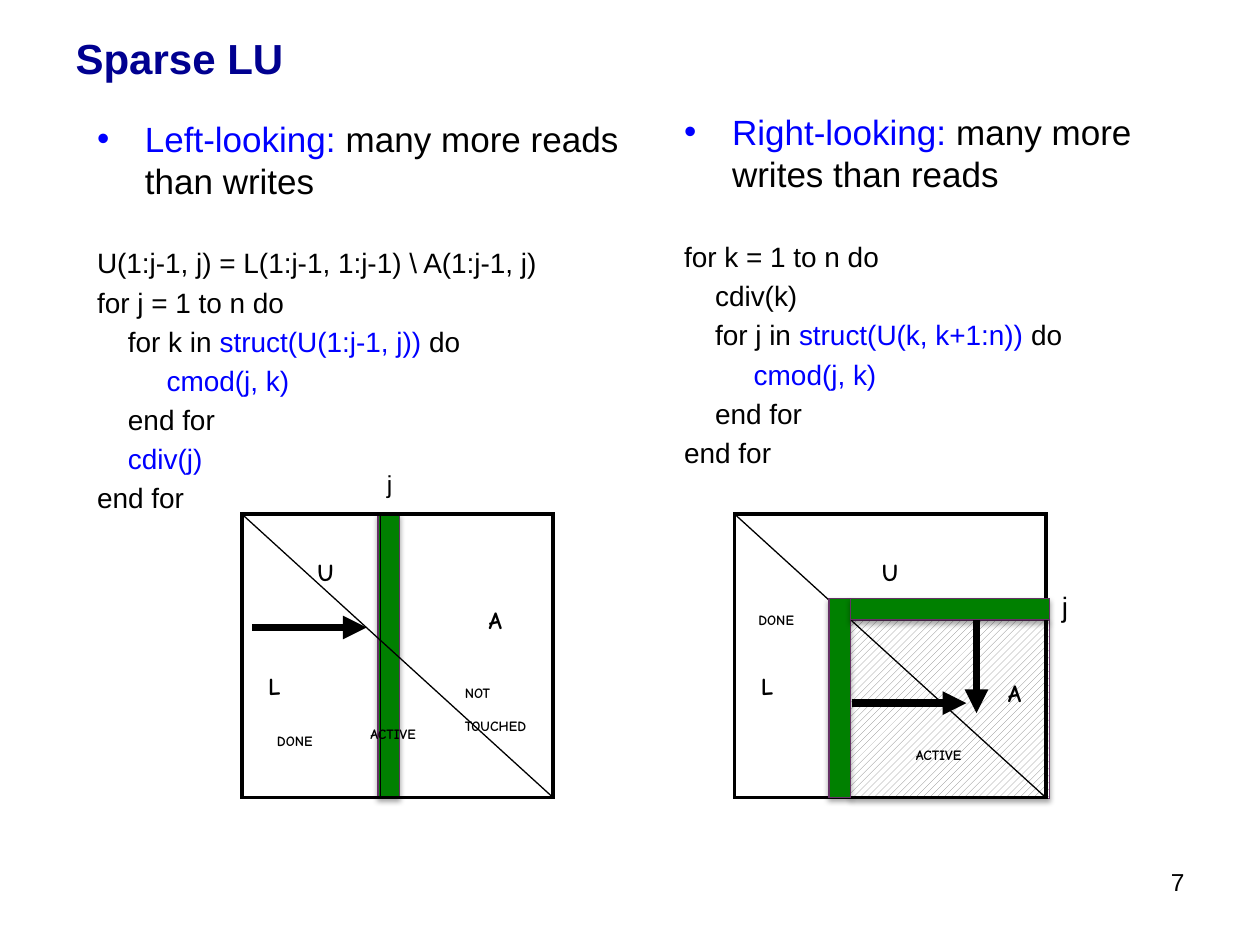
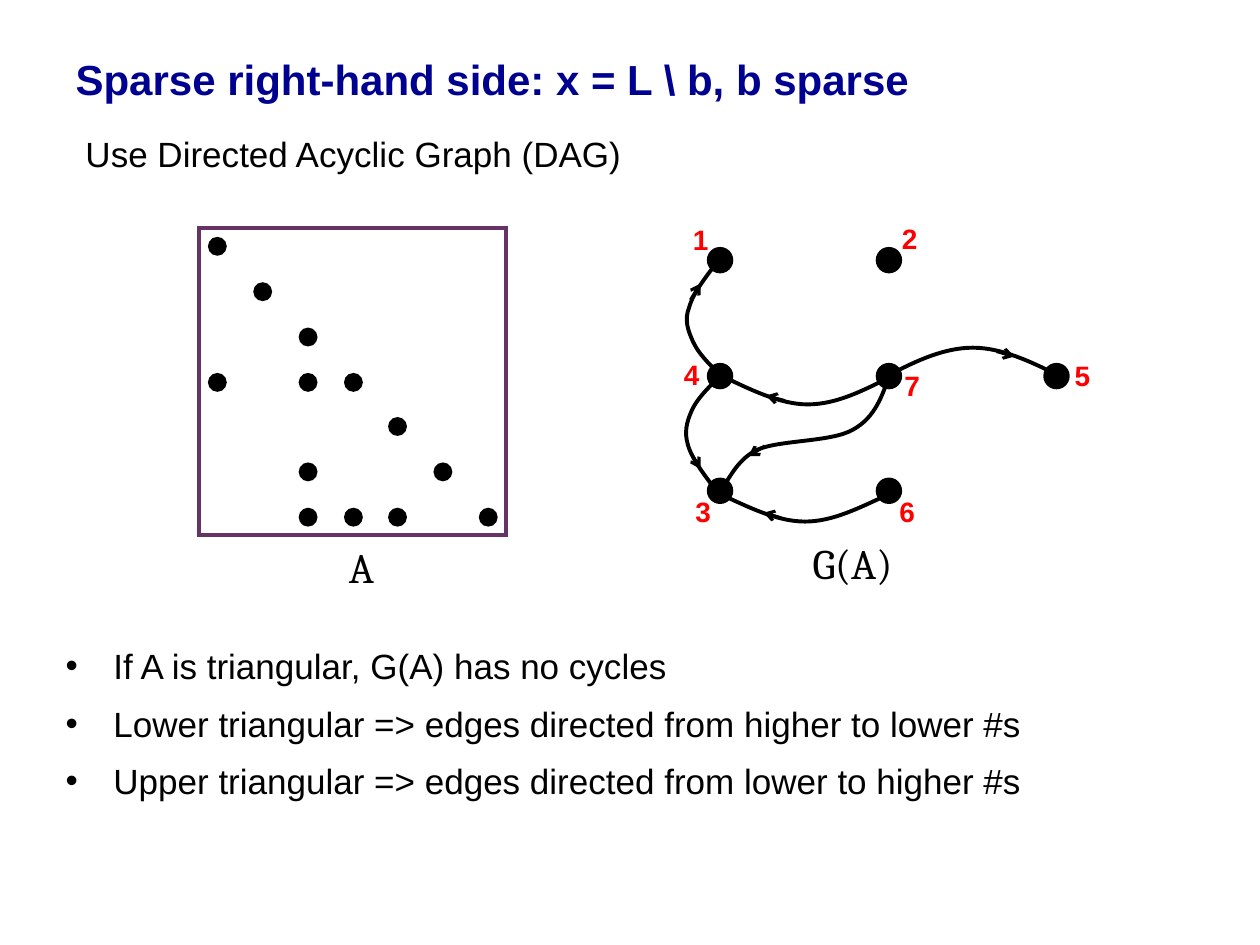
import lxml.etree
import pptx
import pptx.dml.color
import pptx.enum.dml
import pptx.enum.shapes
import pptx.enum.text
import pptx.oxml.ns
import pptx.util

PX = 9144
BLACK, BLUE, NAVY, RED = "000000", "0000FF", "000090", "FF0000"
GREEN, PURPLE, GRAY, WHITE = "008000", "653165", "808080", "FFFFFF"
SANS, HAND, SERIF = "Arial", "Comic Neue", "Cambria"
RECTANGLE = pptx.enum.shapes.MSO_SHAPE.RECTANGLE
OVAL = pptx.enum.shapes.MSO_SHAPE.OVAL
ALIGN = pptx.enum.text.PP_ALIGN
MATRIX_TOP, MATRIX_WIDTH, MATRIX_HEIGHT = 408, 247, 225

LEFT_CODE = [
    [("U(1:j-1, j) = L(1:j-1, 1:j-1) \\ A(1:j-1, j)", BLACK)],
    [("for j = 1 to n do", BLACK)],
    [("    for k in ", BLACK), ("struct(U(1:j-1, j)) ", BLUE), ("do", BLACK)],
    [("         cmod(j, k)", BLUE)],
    [("    end for", BLACK)],
    [("    cdiv(j)", BLUE)],
    [("end for", BLACK)],
]
RIGHT_CODE = [
    [("for k = 1 to n do", BLACK)],
    [("    cdiv(k)", BLACK)],
    [("    for j in ", BLACK), ("struct(U(k, k+1:n)) ", BLUE), ("do", BLACK)],
    [("         cmod(j, k)", BLUE)],
    [("    end for", BLACK)],
    [("end for", BLACK)],
]
NONZERO_COLUMNS = [[0], [1], [2], [0, 2, 3], [4], [2, 5], [2, 3, 4, 6]]
NODE_COLUMNS, NODE_ROWS = (561, 695, 828), (196, 288, 379)
NODES = [
    ("1", 0, 0, 540, 172), ("2", 1, 0, 706, 171), ("3", 0, 2, 542, 388),
    ("4", 0, 1, 533, 279), ("5", 2, 1, 843, 280), ("6", 1, 2, 704, 388),
    ("7", 1, 1, 708, 288),
]
EDGES = [
    ([(707, 297), (728, 286), (750, 276), (772, 276),
      (795, 276), (818, 287), (842, 299)], (791, 279, 805, 283)),
    ([(704, 393), (682, 403), (661, 414), (639, 414),
      (616, 414), (593, 402), (569, 391)], (620, 411, 606, 407)),
    ([(707, 299), (685, 310), (664, 321), (641, 321),
      (619, 321), (595, 309), (572, 298)], (623, 318, 608, 314)),
    ([(570, 296), (562, 288), (554, 280), (550, 271), (546, 262),
      (543, 254), (547, 244), (550, 233), (560, 220), (570, 207)],
     (548, 238, 556, 225)),
    ([(569, 301), (561, 309), (553, 317), (549, 326), (545, 335),
      (543, 343), (546, 353), (549, 364), (559, 377), (569, 390)],
     (548, 359, 556, 372)),
    ([(572, 389), (577, 384), (584, 365), (601, 357), (619, 349),
      (660, 351), (677, 341), (695, 331), (700, 314), (706, 298)],
     (607, 354, 594, 362)),
]


def px(*lengths):
    return [pptx.util.Emu(length * PX) for length in lengths]


def rgb(color):
    return pptx.dml.color.RGBColor.from_string(color)


def add_xml(parent, tag, **attributes):
    element = lxml.etree.SubElement(parent, pptx.oxml.ns.qn(tag))
    for name, value in attributes.items():
        element.set(name, value)
    return element


def set_font(font, size, color, name=SANS, bold=False):
    font.size = pptx.util.Pt(size)
    font.name = name
    font.bold = bold
    font.color.rgb = rgb(color)


def place(shape, left, top, width, height):
    shape.left, shape.top, shape.width, shape.height = px(left, top, width, height)


def set_title(slide, text, top):
    title = slide.shapes.title
    place(title, 50, top, 817, 75)
    frame = title.text_frame
    frame.auto_size = pptx.enum.text.MSO_AUTO_SIZE.NONE
    frame.vertical_anchor = pptx.enum.text.MSO_ANCHOR.MIDDLE
    frame.text = text
    frame.paragraphs[0].alignment = ALIGN.LEFT
    set_font(frame.paragraphs[0].font, 24, NAVY, bold=True)


def prepare_body(body, bounds):
    place(body, *bounds)
    body.text_frame.auto_size = pptx.enum.text.MSO_AUTO_SIZE.NONE
    body.text_frame.margin_top = px(5)[0]
    return body.text_frame


def write_paragraph(paragraph, runs, size, space_before, bullet=False):
    properties = paragraph._p.get_or_add_pPr()
    indent = px(38 if bullet else 0)[0]
    properties.set("marL", str(indent))
    properties.set("indent", str(-indent))
    if bullet:
        bullet_color = add_xml(properties, "a:buClr")
        add_xml(bullet_color, "a:srgbClr", val=runs[0][1])
        add_xml(properties, "a:buFont", typeface=SANS)
        add_xml(properties, "a:buChar", char="•")
    else:
        add_xml(properties, "a:buNone")
    paragraph.space_before = pptx.util.Pt(space_before)
    set_font(paragraph.font, size, runs[0][1])
    for text, color in runs:
        run = paragraph.add_run()
        run.text = text
        if color != runs[0][1]:
            run.font.color.rgb = rgb(color)


def fill_algorithm(body, bounds, name, summary, code):
    frame = prepare_body(body, bounds)
    write_paragraph(frame.paragraphs[0], [(name, BLUE), (summary, BLACK)], 20, 0, True)
    for index, runs in enumerate(code):
        write_paragraph(frame.add_paragraph(), runs, 16, 3.2 if index else 25.5)


def fill_bullets(body, bounds, lines):
    frame = prepare_body(body, bounds)
    for index, line in enumerate(lines):
        paragraph = frame.add_paragraph() if index else frame.paragraphs[0]
        write_paragraph(paragraph, [(line, BLACK)], 20, 4 if index else 0, True)
        paragraph.line_spacing = 1.2


def add_label(slide, text, bounds, size, color=BLACK, name=SANS, bold=False,
              align=ALIGN.LEFT, lowered=False):
    box = slide.shapes.add_textbox(*px(*bounds))
    frame = box.text_frame
    frame.word_wrap = False
    frame.text = text
    for paragraph in frame.paragraphs:
        paragraph.alignment = align
        set_font(paragraph.font, size, color, name, bold)
        if lowered:
            paragraph.runs[0]._r.get_or_add_rPr().set("baseline", "-25000")


def add_matrix_label(slide, text, left, top, width, height=26, size=14):
    add_label(slide, text, (left, top, width, height), size, BLACK, HAND, True,
              lowered=True)


def add_box(slide, kind, bounds, fill=None, line=None, width=0.75):
    shape = slide.shapes.add_shape(kind, *px(*bounds))
    shape.shadow.inherit = False
    if fill:
        shape.fill.solid()
        shape.fill.fore_color.rgb = rgb(fill)
    else:
        shape.fill.background()
    if line:
        shape.line.color.rgb = rgb(line)
        shape.line.width = pptx.util.Pt(width)
        add_xml(shape.line._get_or_add_ln(), "a:miter", lim="800000")
    else:
        shape.line.fill.background()
    return shape


def add_shadowed_box(slide, bounds, fill):
    shape = add_box(slide, RECTANGLE, bounds, fill, PURPLE)
    effects = shape._element.spPr.find(pptx.oxml.ns.qn("a:effectLst"))
    shadow = add_xml(effects, "a:outerShdw", blurRad="39370", dist="22860",
                     dir="5400000", rotWithShape="0")
    shadow_color = add_xml(shadow, "a:srgbClr", val=BLACK)
    add_xml(shadow_color, "a:alpha", val="35000")
    return shape


def add_line(slide, ends, width, head=None):
    connector = slide.shapes.add_connector(
        pptx.enum.shapes.MSO_CONNECTOR.STRAIGHT, *px(*ends))
    connector.line.color.rgb = rgb(BLACK)
    connector.line.width = pptx.util.Pt(width)
    add_xml(connector._element.spPr, "a:effectLst")
    if head:
        add_xml(connector.line._get_or_add_ln(), "a:tailEnd", type=head)


def bend_segments(curve):
    segments = list(curve._element.iter(pptx.oxml.ns.qn("a:lnTo")))
    outline = segments[0].getparent()
    for first in range(0, len(segments), 3):
        bend = add_xml(outline, "a:cubicBezTo")
        for segment in segments[first:first + 3]:
            bend.append(segment[0])
            outline.remove(segment)


def add_curve(slide, controls):
    builder = slide.shapes.build_freeform(*controls[0], scale=PX)
    builder.add_line_segments(controls[1:], close=False)
    curve = builder.convert_to_shape()
    bend_segments(curve)
    curve.shadow.inherit = False
    curve.fill.background()
    curve.line.color.rgb = rgb(BLACK)
    curve.line.width = pptx.util.Pt(2.25)


def add_matrix_frame(slide, left):
    right, bottom = left + MATRIX_WIDTH, MATRIX_TOP + MATRIX_HEIGHT
    add_box(slide, RECTANGLE, (left, MATRIX_TOP, MATRIX_WIDTH, MATRIX_HEIGHT),
            line=BLACK, width=2.25)
    add_line(slide, (left, MATRIX_TOP, right, bottom), 0.75)
    add_matrix_label(slide, "L", left + 11, 505, 32, 39, 24)


def draw_left_looking(slide):
    add_shadowed_box(slide, (300, MATRIX_TOP, 17, MATRIX_HEIGHT), GREEN)
    add_matrix_frame(slide, 192)
    add_line(slide, (302, MATRIX_TOP, 302, MATRIX_TOP + MATRIX_HEIGHT), 0.75)
    add_line(slide, (200, 498, 291, 498), 4.5, "triangle")
    add_matrix_label(slide, "DONE", 210, 563, 60)
    add_matrix_label(slide, "NOT\nTOUCHED", 359, 525, 91, 44)
    add_matrix_label(slide, "ACTIVE", 284, 558, 71)
    add_matrix_label(slide, "U", 242, 415, 35, 39, 24)
    add_matrix_label(slide, "A", 378, 453, 35, 39, 24)
    add_label(slide, "j", (300, 367, 17, 34), 14, align=ALIGN.CENTER)


def draw_right_looking(slide):
    remainder = add_shadowed_box(slide, (675, 492, 158, 142), WHITE)
    remainder.fill.patterned()
    remainder.fill.pattern = pptx.enum.dml.MSO_PATTERN.WIDE_UPWARD_DIAGONAL
    remainder.fill.fore_color.rgb = rgb(GRAY)
    remainder.fill.back_color.rgb = rgb(WHITE)
    add_matrix_frame(slide, 583)
    add_line(slide, (676, 558, 767, 558), 4.5, "triangle")
    add_line(slide, (775, 475, 775, 566), 4.5, "triangle")
    add_matrix_label(slide, "DONE", 592, 467, 60)
    add_matrix_label(slide, "ACTIVE", 717, 574, 71)
    add_matrix_label(slide, "U", 690, 415, 35, 39, 24)
    add_matrix_label(slide, "A", 790, 511, 35, 39, 24)
    add_shadowed_box(slide, (658, 475, 17, 158), GREEN)
    add_shadowed_box(slide, (675, 475, 158, 17), GREEN)
    add_label(slide, "j", (833, 463, 27, 37), 16)


def draw_sparsity(slide):
    add_box(slide, RECTANGLE, (158, 181, 244, 244), line="663366", width=2.25)
    offsets = [round(215 * index / 6) for index in range(7)]
    for row, columns in enumerate(NONZERO_COLUMNS):
        for column in columns:
            add_box(slide, OVAL, (165 + offsets[column], 188 + offsets[row], 15, 15), BLACK)
    add_label(slide, "A", (267, 425, 45, 50), 24, name=SERIF)


def draw_graph(slide):
    for number, column, row, left, top in NODES:
        add_box(slide, OVAL, (NODE_COLUMNS[column], NODE_ROWS[row], 21, 21), BLACK)
        add_label(slide, number, (left, top, 32, 37), 16, RED, bold=True)
    for controls, arrow in EDGES:
        add_curve(slide, controls)
        add_line(slide, arrow, 1.75, "arrow")
    add_label(slide, "G(A)", (635, 422, 91, 50), 24, name=SERIF)


def build_sparse_lu(presentation):
    slide = presentation.slides.add_slide(presentation.slide_layouts[3])
    set_title(slide, "Sparse LU", 8)
    fill_algorithm(slide.placeholders[1], (67, 88, 442, 570), "Left-looking: ",
                   "many more reads than writes", LEFT_CODE)
    fill_algorithm(slide.placeholders[2], (533, 83, 442, 570), "Right-looking: ",
                   "many more writes than reads", RIGHT_CODE)
    draw_left_looking(slide)
    draw_right_looking(slide)
    add_label(slide, "7", (842, 683, 108, 42), 14, align=ALIGN.RIGHT)


def build_sparse_right_hand_side(presentation):
    slide = presentation.slides.add_slide(presentation.slide_layouts[1])
    set_title(slide, "Sparse right-hand side: x = L \\ b, b sparse", 25)
    fill_bullets(slide.placeholders[1], (42, 500, 858, 192), [
        "If A is triangular, G(A) has no cycles",
        "Lower triangular => edges directed from higher to lower #s",
        "Upper triangular => edges directed from lower to higher #s",
    ])
    draw_sparsity(slide)
    draw_graph(slide)
    add_label(slide, "Use Directed Acyclic Graph (DAG)", (58, 100, 449, 44), 20)


def main():
    presentation = pptx.Presentation()
    presentation.slide_width, presentation.slide_height = px(1000, 750)
    build_sparse_lu(presentation)
    build_sparse_right_hand_side(presentation)
    presentation.save("out.pptx")


if __name__ == "__main__":
    main()
